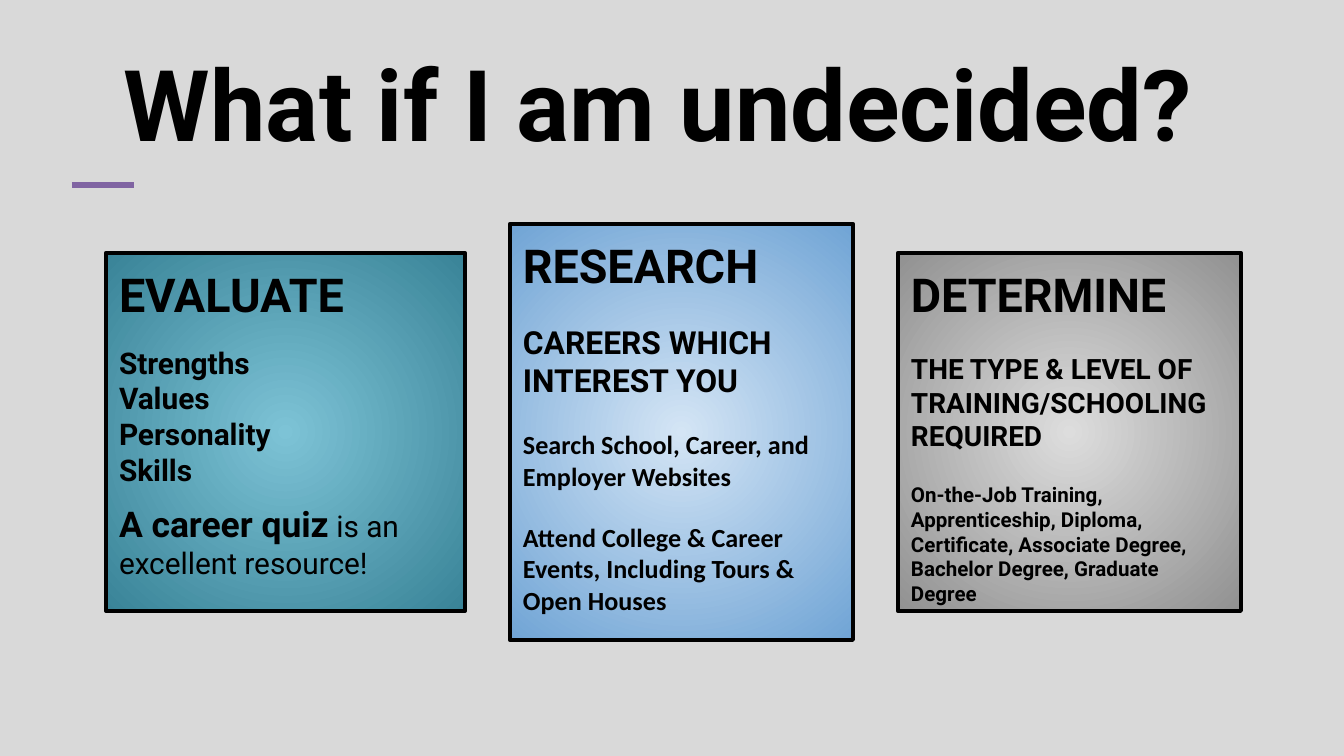
from lxml.etree import SubElement
from pptx import Presentation
from pptx.dml.color import RGBColor
from pptx.enum.shapes import MSO_CONNECTOR, MSO_SHAPE
from pptx.enum.text import MSO_ANCHOR, MSO_AUTO_SIZE, PP_ALIGN
from pptx.oxml.ns import qn
from pptx.util import Emu, Pt

BLACK = RGBColor(0x00, 0x00, 0x00)
GREY = RGBColor(0xD9, 0xD9, 0xD9)
PURPLE = RGBColor(0x80, 0x64, 0xA2)
TEAL = RGBColor(0x7D, 0xC3, 0xD6), RGBColor(0x39, 0x83, 0x97)
BLUE = RGBColor(0xD4, 0xE5, 0xF5), RGBColor(0x70, 0xA4, 0xD5)
ASH = RGBColor(0xDD, 0xDD, 0xDD), RGBColor(0x91, 0x91, 0x91)

HEAD = 25
GAP = 16


def px(count):
    return Emu(round(count * 914400 / 134.4))


class Deck:
    """Holds the style and the current slide."""

    font = "Roboto"

    def __init__(self, wide, high):
        self.file = Presentation()
        self.file.slide_width, self.file.slide_height = px(wide), px(high)

    def page(self, color):
        self.slide = self.file.slides.add_slide(self.file.slide_layouts[5])
        back = self.slide.background.fill
        back.solid()
        back.fore_color.rgb = color

    def style(self, run, size, bold=True, face=None):
        font = run.font
        font.name, font.size, font.bold = face or self.font, Pt(size), bold
        font.color.rgb = BLACK

    def inset(self, frame, side, edge):
        frame.margin_left = frame.margin_right = px(side)
        frame.margin_top = frame.margin_bottom = px(edge)
        frame.word_wrap = True
        frame.auto_size = MSO_AUTO_SIZE.NONE

    def title(self, text, box, size):
        shape = self.slide.shapes.title
        shape.left, shape.top, shape.width, shape.height = map(px, box)
        frame = shape.text_frame
        frame.text = text
        self.inset(frame, 7, 3)
        frame.vertical_anchor = MSO_ANCHOR.MIDDLE
        para = frame.paragraphs[0]
        para.alignment = PP_ALIGN.CENTER
        self.style(para.runs[0], size)

    def rule(self, left, top, width, color, weight):
        ends = map(px, (left, top, left + width, top))
        line = self.slide.shapes.add_connector(MSO_CONNECTOR.STRAIGHT, *ends)
        line.line.color.rgb, line.line.width = color, Pt(weight)
        SubElement(line._element.spPr, qn("a:effectLst"))

    def glow(self, shape, colors):
        shape.fill.gradient()
        for stop, color in zip(shape.fill.gradient_stops, colors):
            stop.color.rgb = color
        grad = shape._element.spPr.find(qn("a:gradFill"))
        grad.remove(grad.find(qn("a:lin")))
        ring = SubElement(grad, qn("a:path"), path="circle")
        mid = {side: "50000" for side in "ltrb"}
        SubElement(ring, qn("a:fillToRect"), mid)

    def card(self, box, colors, paras):
        shape = self.slide.shapes.add_shape(MSO_SHAPE.RECTANGLE, *map(px, box))
        shape.shadow.inherit = False
        self.glow(shape, colors)
        shape.line.color.rgb, shape.line.width = BLACK, Pt(2.25)
        frame = shape.text_frame
        self.inset(frame, 13, 13)
        frame.vertical_anchor = MSO_ANCHOR.TOP
        for index, (gap, *runs) in enumerate(paras):
            para = frame.add_paragraph() if index else frame.paragraphs[0]
            para.alignment = PP_ALIGN.LEFT
            if gap:
                para.space_before = Pt(gap)
            for text, *look in runs:
                run = para.add_run()
                run.text = text
                self.style(run, *look)


def main():
    deck = Deck(1344, 756)
    deck.page(GREY)
    deck.rule(72, 185, 62, PURPLE, 3)
    deck.title("What if I am undecided? ", (56, 51, 1230, 101), 53)
    deck.card((106, 253, 359, 358), TEAL, [
        (0, ("EVALUATE", HEAD)),
        (12, ("Strengths", 16)),
        *((0, (word, 16)) for word in ("Values", "Personality", "Skills")),
        (8, ("A career quiz", 19), (" ", 16),
         ("is an excellent resource!", 16, False)),
    ])
    deck.card((510, 224, 343, 416), BLUE, [
        (0, ("RESEARCH", HEAD)),
        (GAP, ("CAREERS WHICH INTEREST YOU", 17)),
        (GAP, ("Search School, Career, and Employer Websites",
               14, True, "Calibri")),
        (GAP, ("Attend College & Career Events, Including Tours & "
               "Open Houses", 14, True, "Calibri")),
    ])
    deck.card((898, 253, 343, 358), ASH, [
        (0, ("DETERMINE", HEAD)),
        (GAP, ("THE TYPE & LEVEL OF TRAINING/SCHOOLING REQUIRED", 15)),
        (GAP, ("On-the-Job Training, Apprenticeship, Diploma, Certificate, "
               "Associate Degree, Bachelor Degree, Graduate Degree", 11)),
    ])
    deck.file.save("out.pptx")


if __name__ == "__main__":
    main()
